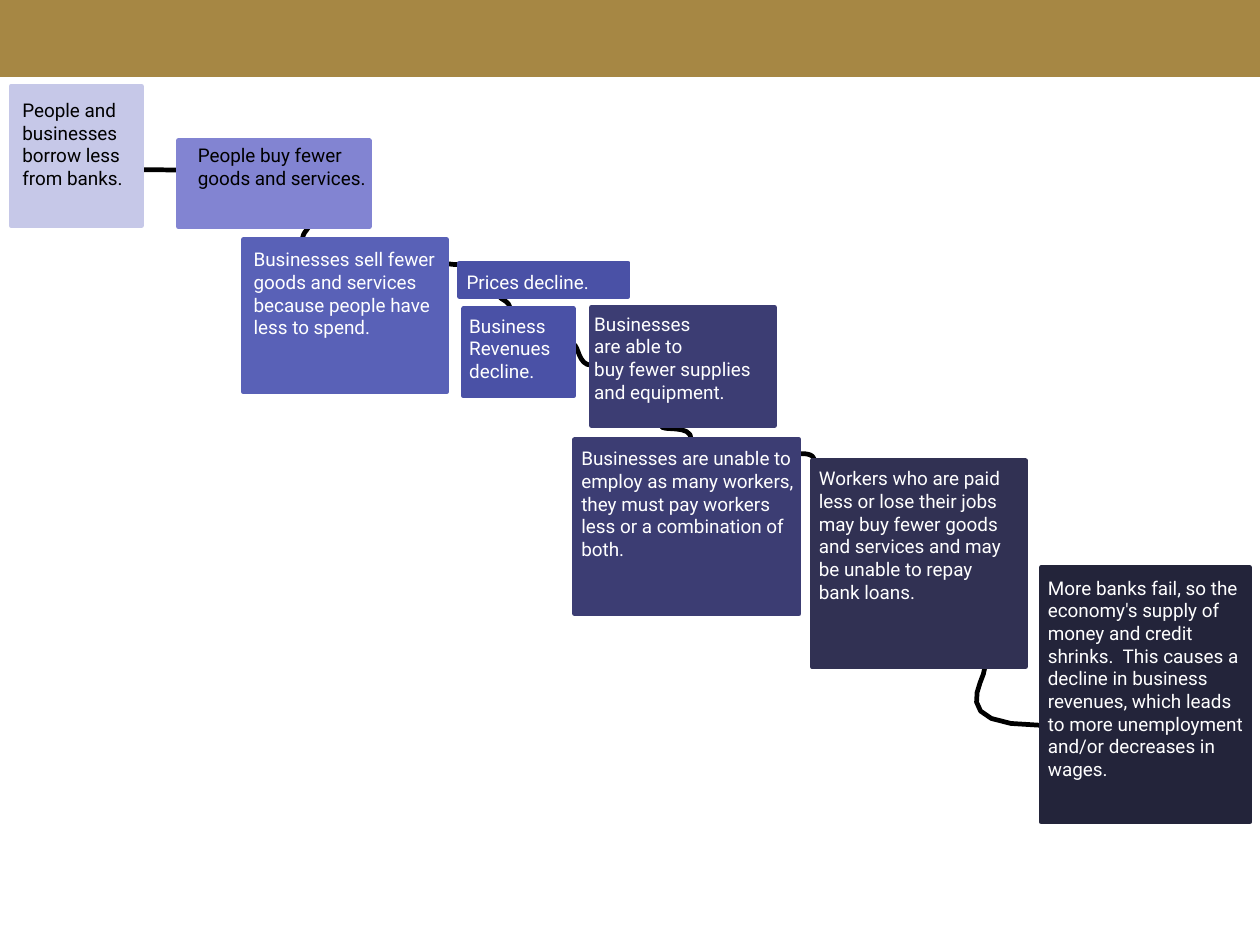
from dataclasses import dataclass
from math import dist

from lxml import etree
from pptx import Presentation
from pptx.dml.color import RGBColor
from pptx.enum.shapes import MSO_SHAPE
from pptx.oxml.ns import qn
from pptx.util import Cm, Pt

RECTANGLE = MSO_SHAPE.RECTANGLE


@dataclass(frozen=True)
class Theme:
    font: str = "Roboto"
    size: float = 12
    outline: float = 3
    banner: str = "A68744"
    thread: str = "000000"
    dark: str = "000000"
    light: str = "FFFFFF"
    lavender: str = "C6C8E8"
    lilac: str = "8284D2"
    iris: str = "5961B7"
    indigo: str = "4A51A6"
    navy: str = "3C3D73"
    midnight: str = "313153"
    ink: str = "23243A"


@dataclass(frozen=True)
class Step:
    area: tuple
    fill: str
    text_shift: tuple
    text_width: float
    rows: int
    lines: tuple
    text_color: str = Theme.light


theme = Theme()

PAGE_WIDTH, PAGE_HEIGHT, BANNER_HEIGHT = 28.22, 21.16, 1.68
ROW_HEIGHT, TEXT_MARGINS = 0.51, 0.25
CURVE_PARTS = 8
LEAVE_REACH = 0.2
OUTWARD = {"left": (-1, 0), "right": (1, 0), "top": (0, -1), "bottom": (0, 1)}

steps = {
    "borrowing": Step((0.25, 1.93, 2.92, 3.12), theme.lavender, (0, 0.15), 3.91, 4,
                      ("People and businesses", "borrow less", "from banks."), theme.dark),
    "buying": Step((4, 3.15, 4.27, 1.93), theme.lilac, (0.18, -0.05), 4.85, 2,
                   ("People buy fewer goods and services.",), theme.dark),
    "selling": Step((5.46, 5.36, 4.54, 3.42), theme.iris, (-0.03, 0.07), 4.88, 4,
                    ("Businesses sell fewer goods and services because people have "
                     "less to spend.",)),
    "prices": Step((10.29, 5.89, 3.78, 0.75), theme.indigo, (-0.09, 0.04), 4.52, 1,
                   ("Prices decline.",)),
    "revenues": Step((10.39, 6.91, 2.45, 1.96), theme.indigo, (-0.13, 0), 4.17, 3,
                     ("Business", "Revenues", "decline.")),
    "supplies": Step((13.25, 6.88, 4.1, 2.65), theme.navy, (-0.19, -0.01), 4.45, 4,
                     ("Businesses", "are able to", "buy fewer supplies and equipment.")),
    "hiring": Step((12.87, 9.85, 5.03, 3.89), theme.navy, (-0.1, 0.03), 5.44, 5,
                   ("Businesses are unable to employ as many workers, they must pay "
                    "workers less or a combination of both.",)),
    "wages": Step((18.19, 10.32, 4.78, 4.61), theme.midnight, (-0.1, 0.01), 4.93, 6,
                  ("Workers who are paid less or lose their jobs may buy fewer goods "
                   "and services and may be unable to repay bank loans.",)),
    "failures": Step((23.32, 12.7, 4.67, 5.71), theme.ink, (-0.1, 0.08), 5, 9,
                     ("More banks fail, so the economy's supply of money and credit "
                      "shrinks.  This causes a decline in business revenues, which leads "
                      "to more unemployment and/or decreases in wages.",)),
}

# Each link: leaving end, arriving end, reach of the arriving curve.
upper_links = [
    (("borrowing", "right", 0.6), ("buying", "left", 0.34), 0.5),
    (("buying", "bottom", 0.68), ("selling", "top", 0.29), 0.5),
    (("selling", "right", 0.16), ("prices", "left", 0.05), 0.5),
    (("prices", "bottom", 0.24), ("revenues", "top", 0.42), 0.5),
]
lower_links = [
    (("revenues", "right", 0.41), ("supplies", "left", 0.49), 0.5),
    (("supplies", "bottom", 0.38), ("hiring", "top", 0.52), 0.5),
    (("hiring", "right", 0.08), ("wages", "top", 0.01), 0.5),
    (("wages", "bottom", 0.81), ("failures", "left", 0.62), 1.2),
]


def set_outline(shape, color):
    shape.shadow.inherit = False
    shape.line.color.rgb = RGBColor.from_string(color)
    shape.line.width = Pt(theme.outline)
    etree.SubElement(shape.line._get_or_add_ln(), qn("a:round"))


def add_block(area, color):
    block = page.shapes.add_shape(RECTANGLE, *[Cm(length) for length in area])
    block.fill.solid()
    block.fill.fore_color.rgb = RGBColor.from_string(color)
    set_outline(block, color)


deck = Presentation()
deck.slide_width, deck.slide_height = Cm(PAGE_WIDTH), Cm(PAGE_HEIGHT)
page = deck.slides.add_slide(deck.slide_layouts[6])

add_block((0, 0, PAGE_WIDTH, BANNER_HEIGHT), theme.banner)

for links in (lower_links, upper_links):
    points = []
    for leaving, arriving, arrive_reach in links:
        ends = []
        for name, side, share in (leaving, arriving):
            left, top, width, height = steps[name].area
            across, down = OUTWARD[side]
            ends.append((left + width * (share if down else (1 + across) / 2),
                         top + height * (share if across else (1 + down) / 2)))
        gap = dist(*ends)
        handles = [
            [place + gap * reach * way for place, way in zip(end, OUTWARD[side])]
            for end, side, reach in zip(ends, (leaving[1], arriving[1]),
                                        (LEAVE_REACH, arrive_reach))
        ]
        for part in range(CURVE_PARTS + 1):
            t = part / CURVE_PARTS
            weights = ((1 - t) ** 3, 3 * t * (1 - t) ** 2, 3 * t ** 2 * (1 - t), t ** 3)
            controls = (ends[0], *handles, ends[1])
            points.append([Cm(sum(weight * place for weight, place in zip(weights, axis)))
                           for axis in zip(*controls)])
    builder = page.shapes.build_freeform(*points[0])
    builder.add_line_segments(points[1:], close=False)
    thread = builder.convert_to_shape()
    thread.fill.background()
    set_outline(thread, theme.thread)

for step in steps.values():
    add_block(step.area, step.fill)
    left, top = [edge + shift for edge, shift in zip(step.area, step.text_shift)]
    text_height = step.rows * ROW_HEIGHT + TEXT_MARGINS
    box = page.shapes.add_textbox(Cm(left), Cm(top), Cm(step.text_width), Cm(text_height))
    frame = box.text_frame
    frame.word_wrap = True
    for index, line in enumerate(step.lines):
        para = frame.add_paragraph() if index else frame.paragraphs[0]
        span = para.add_run()
        span.text = line
        span.font.name = theme.font
        span.font.size = Pt(theme.size)
        span.font.color.rgb = RGBColor.from_string(step.text_color)

deck.save("out.pptx")
